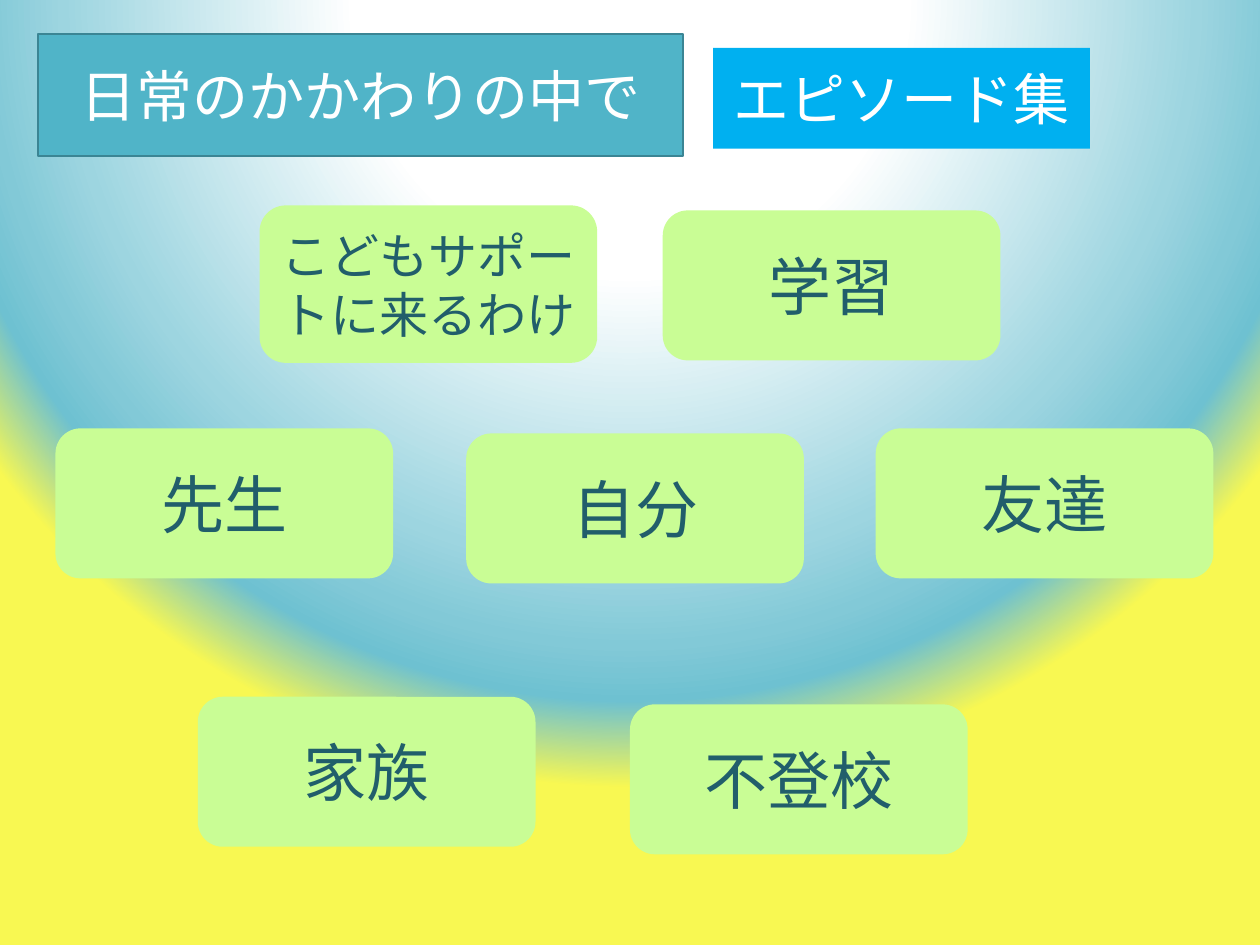
from lxml.etree import SubElement
from pptx import Presentation
from pptx.dml.color import RGBColor
from pptx.enum.shapes import MSO_SHAPE as Shape
from pptx.enum.text import MSO_ANCHOR as Anchor, PP_ALIGN as Align
from pptx.oxml.ns import qn
from pptx.util import Inches, Pt

FONT = "Noto Sans CJK JP"
TITLE_ONLY = 5
CARD_WIDTH, CARD_HEIGHT = 2.68, 1.19
BACKGROUND_STOPS = [(0, "FFFFFF"), (35, "FFFFFF"), (72, "9DD5E0"),
                    (82, "82C9D7"), (89, "6EC1D1"), (100, "F8F852")]
TOPICS = [
    ("こどもサポートに来るわけ", 2.06, 1.63, 1.25, 28),
    ("学習", 5.26, 1.67, CARD_HEIGHT, 36),
    ("先生", 0.44, 3.4, CARD_HEIGHT, 36),
    ("自分", 3.7, 3.44, CARD_HEIGHT, 36),
    ("友達", 6.95, 3.4, CARD_HEIGHT, 36),
    ("家族", 1.57, 5.53, CARD_HEIGHT, 36),
    ("不登校", 5, 5.59, CARD_HEIGHT, 36),
]


def color(value):
    return RGBColor.from_string(value)


def write_text(shape, text, size, text_color):
    frame = shape.text_frame
    frame.word_wrap = True
    frame.vertical_anchor = Anchor.MIDDLE
    paragraph = frame.paragraphs[0]
    paragraph.alignment = Align.CENTER
    run = paragraph.add_run()
    run.text = text
    run.font.size = Pt(size)
    run.font.name = FONT
    run.font.color.rgb = color(text_color)
    SubElement(run.font._element, qn("a:ea"), typeface=FONT)


def paint(shape, fill, line=None):
    shape.fill.solid()
    shape.fill.fore_color.rgb = color(fill)
    if line:
        shape.line.color.rgb = color(line)
        shape.line.width = Pt(1)
    else:
        shape.line.fill.background()


def set_background(slide):
    slide.background.fill.gradient()
    gradient = slide.element.find(".//" + qn("a:gradFill"))
    for child in list(gradient):
        gradient.remove(child)
    stops = SubElement(gradient, qn("a:gsLst"))
    for position, value in BACKGROUND_STOPS:
        stop = SubElement(stops, qn("a:gs"), pos=str(position * 1000))
        SubElement(stop, qn("a:srgbClr"), val=value)
    circle = SubElement(gradient, qn("a:path"), path="circle")
    SubElement(circle, qn("a:fillToRect"), l="50000", t="-80000", r="50000", b="180000")


def add_title(slide, left, top, width, height):
    title = slide.shapes.title
    title.left, title.top = left, top
    title.width, title.height = width, height
    paint(title, "50B4C8", line="3B8594")
    write_text(title, "日常のかかわりの中で", size=32, text_color="FFFFFF")


def add_box(slide, kind, text, left, top, width, height, *, fill, size, text_color):
    shape = slide.shapes.add_shape(kind, left, top, width, height)
    shape.shadow.inherit = False
    paint(shape, fill)
    write_text(shape, text, size=size, text_color=text_color)


def add_topics(slide):
    for text, left, top, height, size in TOPICS:
        add_box(slide, Shape.FLOWCHART_ALTERNATE_PROCESS, text,
                Inches(left), Inches(top), Inches(CARD_WIDTH), Inches(height),
                fill="C9FD95", size=size, text_color="215E6B")


def main():
    presentation = Presentation()
    presentation.slide_width = Inches(10)
    presentation.slide_height = Inches(7.5)
    slide = presentation.slides.add_slide(presentation.slide_layouts[TITLE_ONLY])
    set_background(slide)
    add_title(slide, Inches(0.3), Inches(0.27), Inches(5.12), Inches(0.97))
    add_box(slide, Shape.RECTANGLE, "エピソード集",
            Inches(5.66), Inches(0.38), Inches(2.99), Inches(0.8),
            fill="00B0F0", size=32, text_color="FFFFFF")
    add_topics(slide)
    presentation.save("out.pptx")


if __name__ == "__main__":
    main()
